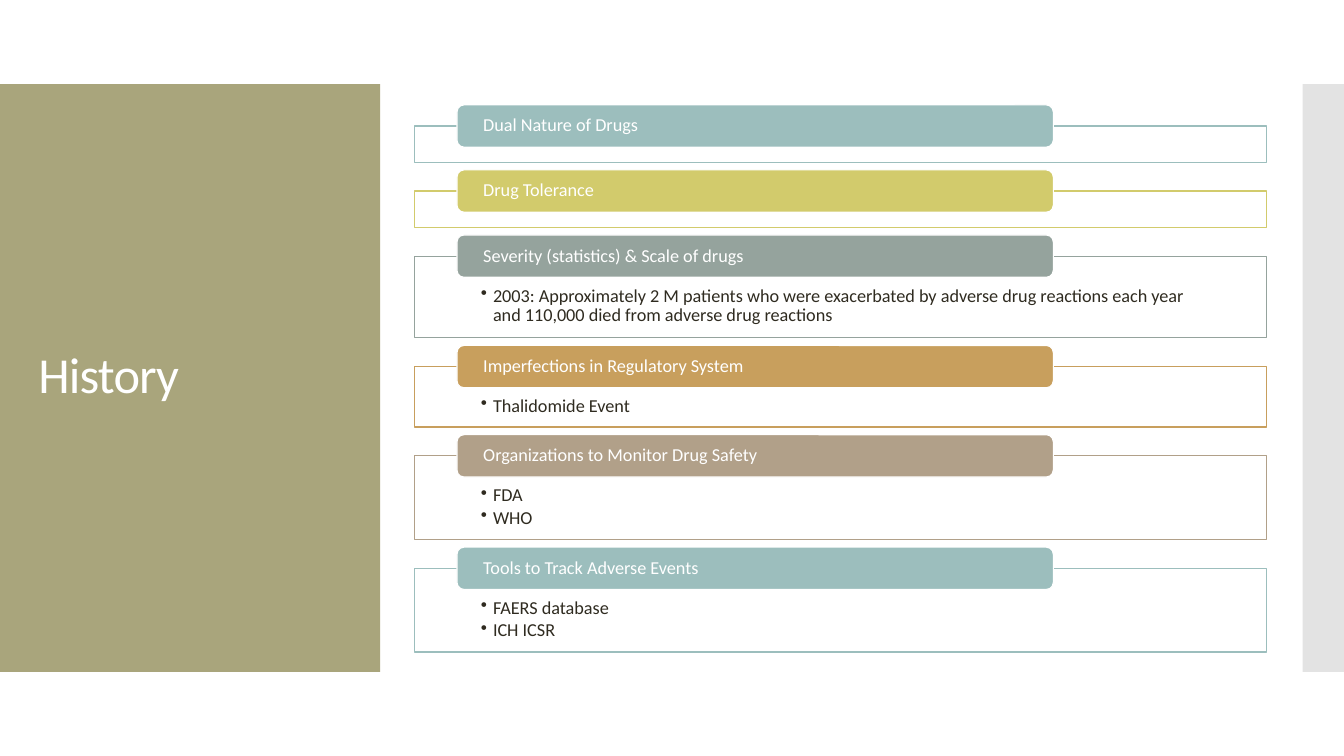
from lxml.etree import SubElement
from pptx import Presentation
from pptx.dml.color import RGBColor
from pptx.enum.shapes import MSO_SHAPE
from pptx.enum.text import MSO_ANCHOR, MSO_AUTO_SIZE, PP_ALIGN
from pptx.oxml.ns import qn
from pptx.util import Inches, Pt

WIDTH, HEIGHT = 13.33, 7.5
BAND_TOP, BAND_HEIGHT = HEIGHT / 9, HEIGHT * 7 / 9
FRAME_LEFT, FRAME_WIDTH, FIRST_FRAME_TOP = 4.11, 8.45, 1.25
TAB_LEFT, TAB_WIDTH, TAB_HEIGHT = FRAME_LEFT + FRAME_WIDTH * 0.05, FRAME_WIDTH * 0.7, 0.42
FRAME_GAP = TAB_HEIGHT * 0.68
WHITE, INK, OLIVE, GREY = "FFFFFF", "2F2B20", "A9A57C", "C8C8C8"

# heading, accent colour, frame height, bullets
TOPICS = [
    ("Dual Nature of Drugs", "9CBEBD", 0.36, []),
    ("Drug Tolerance", "D2CB6C", 0.36, []),
    ("Severity (statistics) & Scale of drugs", "95A39D", 0.81,
     ["2003: Approximately 2 M patients who were exacerbated by adverse drug "
      "reactions each year and 110,000 died from adverse drug reactions"]),
    ("Imperfections in Regulatory System", "C89F5D", 0.6, ["Thalidomide Event"]),
    ("Organizations to Monitor Drug Safety", "B1A089", 0.83, ["FDA", "WHO"]),
    ("Tools to Track Adverse Events", "9CBEBD", 0.83, ["FAERS database", "ICH ICSR"]),
]


def color(hex_code):
    return RGBColor.from_string(hex_code)


def apply(target, values):
    for name, value in values.items():
        setattr(target, name, value)


def add_block(slide, kind, box, fill, line=None, opacity=100):
    block = slide.shapes.add_shape(kind, *map(Inches, box))
    block.shadow.inherit = False
    block.fill.solid()
    block.fill.fore_color.rgb = color(fill)
    if opacity < 100:
        fill_color = block.element.spPr.find(qn("a:solidFill"))[0]
        SubElement(fill_color, qn("a:alpha"), val=str(opacity * 1000))
    if line:
        block.line.color.rgb = color(line)
        block.line.width = Pt(0.85)
    else:
        block.line.fill.background()
    return block


def set_margins(frame, left, top, right, bottom):
    apply(frame, {"margin_left": Inches(left), "margin_top": Inches(top),
                  "margin_right": Inches(right), "margin_bottom": Inches(bottom)})


def write_lines(frame, lines, size, ink, anchor):
    apply(frame, {"word_wrap": True, "auto_size": MSO_AUTO_SIZE.NONE,
                  "vertical_anchor": anchor, "text": "\n".join(lines)})
    for paragraph in frame.paragraphs:
        apply(paragraph, {"alignment": PP_ALIGN.LEFT, "line_spacing": 0.9})
        for run in paragraph.runs:
            apply(run.font, {"name": "Calibri", "size": Pt(size)})
            run.font.color.rgb = color(ink)


def add_bullets(frame):
    for paragraph in frame.paragraphs:
        paragraph.space_after = Pt(2)
        properties = paragraph._p.get_or_add_pPr()
        properties.set("marL", str(Inches(0.12)))
        properties.set("indent", str(-Inches(0.12)))
        SubElement(properties, qn("a:buChar"), char="•")


def add_title(slide, text):
    title = slide.shapes.title
    apply(title, {"left": Inches(0.28), "top": Inches(1.23),
                  "width": Inches(3.22), "height": Inches(5.03)})
    write_lines(title.text_frame, [text], 36, WHITE, MSO_ANCHOR.MIDDLE)
    title.text_frame.paragraphs[0].runs[0].font._element.set("spc", "-60")
    title.element.getparent().append(title.element)  # in front of the panel


def add_topic(slide, top, heading, accent, height, bullets):
    """Draw an outlined frame with its bullets and the heading tab on its top edge."""
    frame = add_block(slide, MSO_SHAPE.RECTANGLE, (FRAME_LEFT, top, FRAME_WIDTH, height),
                      WHITE, accent, opacity=90)
    if bullets:
        set_margins(frame.text_frame, 0.66, 0.3, 0.66, 0.1)
        write_lines(frame.text_frame, bullets, 13, INK, MSO_ANCHOR.TOP)
        add_bullets(frame.text_frame)
    tab = add_block(slide, MSO_SHAPE.ROUNDED_RECTANGLE,
                    (TAB_LEFT, top - TAB_HEIGHT / 2, TAB_WIDTH, TAB_HEIGHT), accent, WHITE)
    set_margins(tab.text_frame, 0.24, 0, 0.24, 0)
    write_lines(tab.text_frame, [heading], 13, WHITE, MSO_ANCHOR.MIDDLE)


def main():
    deck = Presentation()
    apply(deck, {"slide_width": Inches(WIDTH), "slide_height": Inches(HEIGHT)})
    slide = deck.slides.add_slide(deck.slide_layouts.get_by_name("Title Only"))

    add_block(slide, MSO_SHAPE.RECTANGLE, (0, BAND_TOP, 3.77, BAND_HEIGHT), OLIVE)
    add_block(slide, MSO_SHAPE.RECTANGLE, (12.92, BAND_TOP, WIDTH - 12.92, BAND_HEIGHT),
              GREY, opacity=50)
    add_title(slide, "History")

    top = FIRST_FRAME_TOP
    for heading, accent, height, bullets in TOPICS:
        add_topic(slide, top, heading, accent, height, bullets)
        top += height + FRAME_GAP

    deck.save("out.pptx")


if __name__ == "__main__":
    main()
